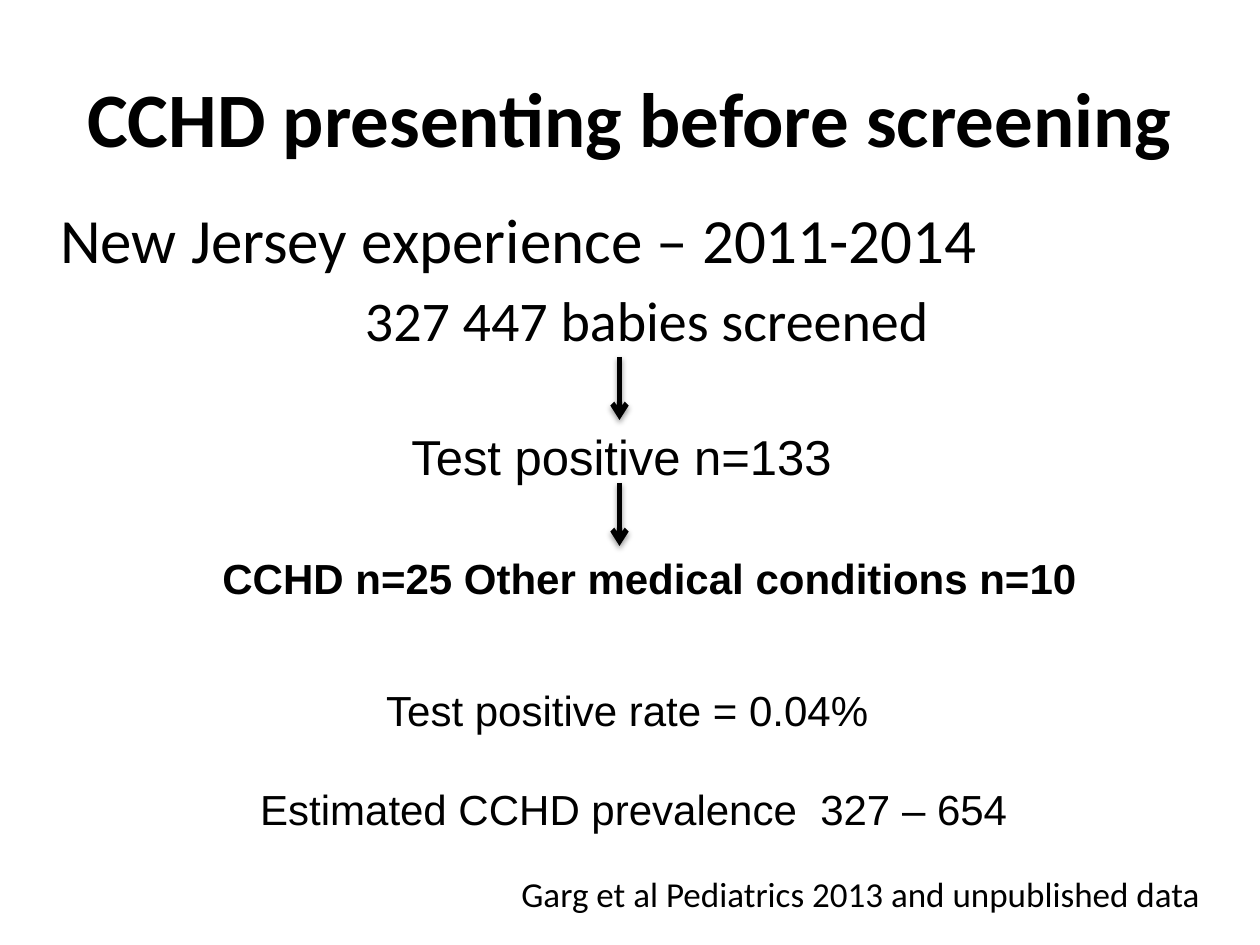
from dataclasses import dataclass

from lxml import etree
from pptx import Presentation
from pptx import util as u
from pptx.dml.color import RGBColor
from pptx.enum import shapes, text
from pptx.oxml import parse_xml
from pptx.oxml.ns import nsdecls, qn

BLACK = RGBColor(0, 0, 0)
WIDTH, HEIGHT = u.Inches(10), u.Inches(7.5)
COLUMNS, ROWS = 120, 90
LEFT, CENTER, RIGHT = text.PP_ALIGN.LEFT, text.PP_ALIGN.CENTER, text.PP_ALIGN.RIGHT
ARROW_COLUMN = 59
ARROW_LENGTH = 6


@dataclass
class Line:
    words: str
    size: int
    font: str = "Arial"
    bold: bool = False
    align: text.PP_ALIGN = LEFT
    indent: float = 0
    before: int = 0
    spacing: float = 1


@dataclass
class Block:
    column: float
    row: float
    columns: float
    rows: float
    lines: list[Line]
    anchor: text.MSO_ANCHOR = text.MSO_ANCHOR.TOP
    wrap: bool = True


BLOCKS = [
    Block(6, 3.6, 108, 15,
          [Line("CCHD presenting before screening", 44, "Calibri", True, CENTER)],
          anchor=text.MSO_ANCHOR.MIDDLE),
    Block(0, 19.3, 120, 14,
          [Line("New Jersey experience – 2011-2014", 36, "Calibri",
                indent=0.38, spacing=0.9),
           Line("327 447 babies screened", 32, "Calibri", align=CENTER,
                indent=0.27, before=9, spacing=0.9)]),
    Block(38, 40, 51, 7, [Line("Test positive n=133", 28)]),
    Block(20, 52, 98, 6, [Line("CCHD n=25 Other medical conditions n=10", 24, bold=True)]),
    Block(17, 64.6, 100, 15,
          [Line("Test positive rate = 0.04%", 24, indent=1.55),
           Line("Estimated CCHD prevalence  327 – 654", 24, indent=0.55, before=28)]),
    Block(48, 83, 67.5, 5,
          [Line("Garg et al Pediatrics 2013 and unpublished data", 20, "Calibri",
                align=RIGHT, spacing=0.9)],
          wrap=False),
]
ARROW_ROWS = (34, 46)


def across(columns: float) -> int:
    return round(WIDTH * columns / COLUMNS)


def down(rows: float) -> int:
    return round(HEIGHT * rows / ROWS)


def apply(target, values: dict) -> None:
    for name, value in values.items():
        setattr(target, name, value)


def draw_block(page, block: Block) -> None:
    box = page.shapes.add_textbox(across(block.column), down(block.row),
                                  across(block.columns), down(block.rows))
    frame = box.text_frame
    apply(frame, {"word_wrap": block.wrap, "vertical_anchor": block.anchor})
    for index, line in enumerate(block.lines):
        para = frame.add_paragraph() if index else frame.paragraphs[0]
        apply(para, {"alignment": line.align, "line_spacing": line.spacing,
                     "space_before": u.Pt(line.before)})
        para._p.get_or_add_pPr().set("marL", str(u.Inches(line.indent)))
        span = para.add_run()
        span.text = line.words
        apply(span.font, {"name": line.font, "size": u.Pt(line.size), "bold": line.bold})
        span.font.color.rgb = BLACK


def draw_arrow(page, row: float) -> None:
    """Draw a downward arrow with a soft shadow beneath it."""
    arrow = page.shapes.add_connector(
        shapes.MSO_CONNECTOR.STRAIGHT, across(ARROW_COLUMN), down(row),
        across(ARROW_COLUMN), down(row + ARROW_LENGTH))
    arrow.line.width = u.Pt(3)
    arrow.line.color.rgb = BLACK
    etree.SubElement(arrow.line._get_or_add_ln(), qn("a:tailEnd"), type="arrow")
    arrow._element.spPr.append(parse_xml(
        f'<a:effectLst {nsdecls("a")}>'
        f'<a:outerShdw blurRad="{u.Pt(3.1)}" dist="{u.Pt(1.6)}" dir="5400000" rotWithShape="0">'
        f'<a:srgbClr val="{BLACK}"><a:alpha val="38000"/></a:srgbClr>'
        '</a:outerShdw></a:effectLst>'))


def main() -> None:
    deck = Presentation()
    apply(deck, {"slide_width": WIDTH, "slide_height": HEIGHT})
    page = deck.slides.add_slide(deck.slide_layouts[6])
    for block in BLOCKS:
        draw_block(page, block)
    for row in ARROW_ROWS:
        draw_arrow(page, row)
    deck.save("out.pptx")


if __name__ == "__main__":
    main()
